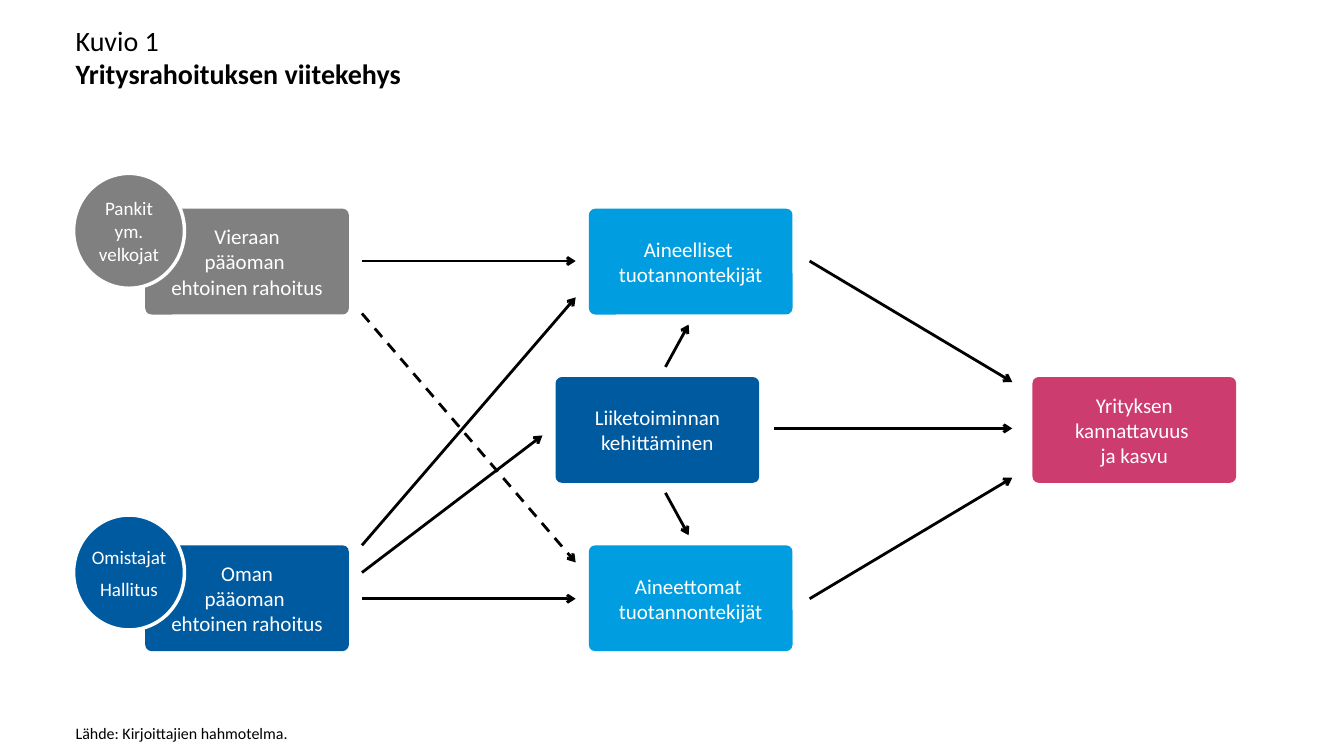
from lxml import etree
from pptx import Presentation
from pptx.dml.color import RGBColor
from pptx.enum.dml import MSO_LINE
from pptx.enum.shapes import MSO_CONNECTOR, MSO_SHAPE
from pptx.enum.text import MSO_ANCHOR, PP_ALIGN
from pptx.oxml.ns import qn
from pptx.util import Inches, Pt

ROUNDED = MSO_SHAPE.ROUNDED_RECTANGLE
OVAL = MSO_SHAPE.OVAL
STRAIGHT = MSO_CONNECTOR.STRAIGHT
DASH = MSO_LINE.DASH
LEFT, CENTER = PP_ALIGN.LEFT, PP_ALIGN.CENTER
TOP, MIDDLE = MSO_ANCHOR.TOP, MSO_ANCHOR.MIDDLE

FONT = "Calibri"
BLACK, WHITE, GRAY = "000000", "FFFFFF", "808080"
NAVY, SKY, PINK = "005AA0", "009EE0", "CD3C6E"

BOX_WIDTH, BOX_HEIGHT = 2.02, 1.05
CIRCLE_WIDTH, CIRCLE_HEIGHT = 1.1, 1.14
# Box rows and columns
UPPER, CENTRAL, LOWER = 2.07, 3.74, 5.41
FUNDING, DEVELOPMENT, FACTORS, OUTCOME = 1.44, 5.51, 5.84, 10.24
# Arrow ends shared by several arrows
FUNDING_EXIT, FACTORS_ENTRY, FACTORS_EXIT, OUTCOME_ENTRY = 3.59, 5.71, 8.03, 10.04


def color(code):
    return RGBColor.from_string(code)


def write_text(shape, text, size, ink=WHITE, align=CENTER, anchor=MIDDLE,
               margin=None, bold_line=None, gap=0):
    """Write one paragraph per line of text, with gap points between them."""
    frame = shape.text_frame
    frame.word_wrap = True
    frame.vertical_anchor = anchor
    if margin is not None:
        frame.margin_left = frame.margin_right = Inches(margin)
        frame.margin_top = frame.margin_bottom = Inches(margin)
    for index, line in enumerate(text.split("\n")):
        para = frame.paragraphs[0] if index == 0 else frame.add_paragraph()
        para.alignment = align
        para.space_before = Pt(gap if index else 0)
        span = para.add_run()
        span.text = line
        span.font.name = FONT
        span.font.size = Pt(size)
        span.font.bold = index == bold_line
        span.font.color.rgb = color(ink)


def add_label(page, top, height, text, size, bold_line=None):
    label = page.shapes.add_textbox(Inches(0.75), Inches(top), Inches(12.58), Inches(height))
    write_text(label, text, size, ink=BLACK, align=LEFT, anchor=TOP,
               margin=0, bold_line=bold_line)


def add_filled(page, kind, left, top, width, height, fill):
    shape = page.shapes.add_shape(kind, Inches(left), Inches(top), Inches(width), Inches(height))
    shape.shadow.inherit = False
    shape.fill.solid()
    shape.fill.fore_color.rgb = color(fill)
    return shape


def add_box(page, left, top, fill, text):
    box = add_filled(page, ROUNDED, left, top, BOX_WIDTH, BOX_HEIGHT, fill)
    box.adjustments[0] = 0.06
    box.line.fill.background()
    write_text(box, text, 15)


def add_circle(page, top, fill, text, gap=0):
    circle = add_filled(page, OVAL, 0.73, top, CIRCLE_WIDTH, CIRCLE_HEIGHT, fill)
    circle.line.color.rgb = color(WHITE)
    circle.line.width = Pt(2.5)
    write_text(circle, text, 13.6, margin=0, gap=gap)


def add_arrow(page, start, end, dashed=False):
    arrow = page.shapes.add_connector(STRAIGHT, *map(Inches, start + end))
    arrow.line.color.rgb = color(BLACK)
    arrow.line.width = Pt(2)
    if dashed:
        arrow.line.dash_style = DASH
    etree.SubElement(arrow.line._get_or_add_ln(), qn("a:tailEnd"), type="arrow")
    etree.SubElement(arrow._element.spPr, qn("a:effectLst"))


def main():
    deck = Presentation()
    deck.slide_width, deck.slide_height = Inches(13.33), Inches(7.5)
    page = deck.slides.add_slide(deck.slide_layouts[6])

    # Heading and source
    add_label(page, 0.23, 0.67, "Kuvio 1\nYritysrahoituksen viitekehys", 20, bold_line=1)
    add_label(page, 7.18, 0.19, "Lähde: Kirjoittajien hahmotelma.", 11.4)

    # Framework boxes
    for left, top, fill, text in (
        (FUNDING, UPPER, GRAY, "Vieraan\npääoman \nehtoinen rahoitus"),
        (FUNDING, LOWER, NAVY, "Oman\npääoman \nehtoinen rahoitus"),
        (FACTORS, UPPER, SKY, "Aineelliset \ntuotannontekijät"),
        (FACTORS, LOWER, SKY, "Aineettomat \ntuotannontekijät"),
        (DEVELOPMENT, CENTRAL, NAVY, "Liiketoiminnan kehittäminen"),
        (OUTCOME, CENTRAL, PINK, "Yrityksen\nkannattavuus \nja kasvu"),
    ):
        add_box(page, left, top, fill, text)

    # Arrows from funding, from development and to the outcome
    for start, end in (
        ((FUNDING_EXIT, 2.59), (FACTORS_ENTRY, 2.59)),
        ((FUNDING_EXIT, 5.94), (FACTORS_ENTRY, 5.94)),
        ((FUNDING_EXIT, 5.41), (FACTORS_ENTRY, 2.95)),
        ((FUNDING_EXIT, 5.68), (5.38, 4.32)),
        ((6.6, 3.64), (6.83, 3.22)),
        ((6.6, 4.89), (6.83, 5.31)),
        ((FACTORS_EXIT, 2.59), (OUTCOME_ENTRY, 3.79)),
        ((FACTORS_EXIT, 5.94), (OUTCOME_ENTRY, 4.74)),
        ((7.68, 4.25), (OUTCOME_ENTRY, 4.25)),
    ):
        add_arrow(page, start, end)
    add_arrow(page, (FUNDING_EXIT, 3.11), (FACTORS_ENTRY, 5.58), dashed=True)

    # Funder circles
    add_circle(page, 5.11, NAVY, "Omistajat\nHallitus", gap=6.5)
    add_circle(page, 1.72, GRAY, "Pankit ym. velkojat")

    deck.save("out.pptx")


if __name__ == "__main__":
    main()
